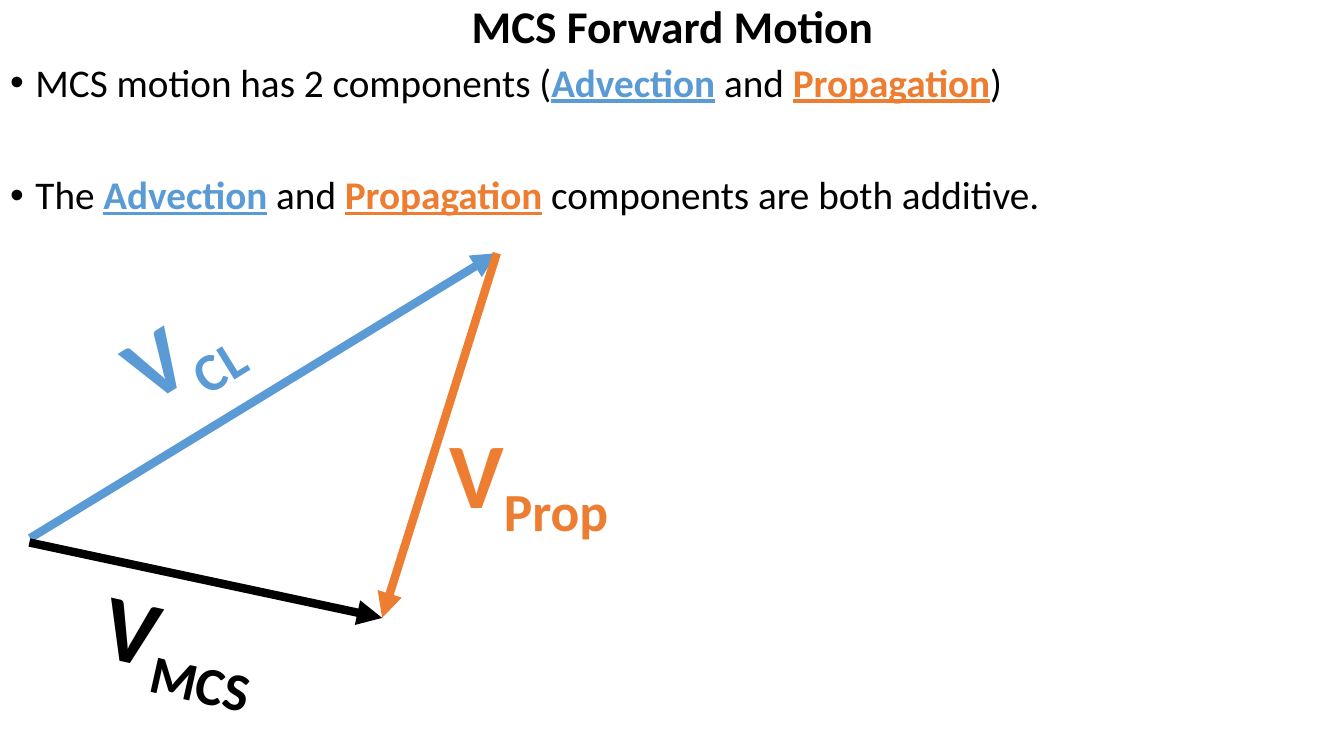
from dataclasses import dataclass
from lxml.etree import SubElement as Sub
from pptx import Presentation
from pptx.dml.color import RGBColor as RGB
from pptx.enum.shapes import MSO_CONNECTOR as Link
from pptx.enum.text import MSO_ANCHOR as Anchor, MSO_AUTO_SIZE as Fit, PP_ALIGN as Align
from pptx.oxml.ns import qn
from pptx.util import Cm, Pt


@dataclass(frozen=True)
class Theme:
    face: str = "Calibri"
    black: RGB = RGB(0, 0, 0)
    blue: RGB = RGB(0x5B, 0x9B, 0xD5)
    orange: RGB = RGB(0xED, 0x7D, 0x31)
    title: float = 32.4
    body: float = 28
    label: float = 66
    line: float = 6


def apply(item, **values):
    for name, value in values.items():
        setattr(item, name, value)


class Deck:
    def __init__(self, theme):
        self.theme = theme
        self.file = Presentation()
        apply(self.file, slide_width=Cm(33.87), slide_height=Cm(19.05))
        self.slide = self.file.slides.add_slide(self.file.slide_layouts[1])

    def place(self, shape, box):
        apply(shape, **dict(zip(("left", "top", "width", "height"), map(Cm, box))))

    def add_text(self, para, text, size, color, **style):
        run = para.add_run()
        run.text = text
        apply(run.font, name=self.theme.face, size=Pt(size), **style)
        run.font.color.rgb = color
        return run

    def title(self, text, box):
        shape = self.slide.shapes.title
        self.place(shape, box)
        frame = shape.text_frame
        apply(frame, word_wrap=True, auto_size=Fit.NONE, vertical_anchor=Anchor.MIDDLE)
        para = frame.paragraphs[0]
        apply(para, alignment=Align.CENTER, line_spacing=0.9)
        self.add_text(para, text, self.theme.title, self.theme.black, bold=True)

    def bullet(self, para):
        props = para._p.get_or_add_pPr()
        apply(para, alignment=Align.LEFT, line_spacing=0.9)
        props.set("marL", str(Cm(0.64)))
        props.set("indent", str(Cm(-0.64)))
        tint = Sub(props, qn("a:buClr"))
        Sub(tint, qn("a:srgbClr"), val=str(self.theme.black))
        Sub(props, qn("a:buFont"), typeface="Arial")
        Sub(props, qn("a:buChar"), char="•")

    def list(self, items, box, gap):
        shape = self.slide.placeholders[1]
        self.place(shape, box)
        frame = shape.text_frame
        apply(frame, word_wrap=True, auto_size=Fit.NONE, vertical_anchor=Anchor.TOP)
        terms = {"Advection": self.theme.blue, "Propagation": self.theme.orange}
        for row, parts in enumerate(items):
            para = frame.add_paragraph() if row else frame.paragraphs[0]
            para.space_before = Pt(gap if row else 0)
            self.bullet(para)
            for text in parts:
                key = text in terms
                color = terms.get(text, self.theme.black)
                self.add_text(para, text, self.theme.body, color, bold=key, underline=key)

    def arrow(self, start, end, color):
        line = self.slide.shapes.add_connector(Link.STRAIGHT, *map(Cm, start + end))
        line.line.width = Pt(self.theme.line)
        line.line.color.rgb = color
        Sub(line.line._get_or_add_ln(), qn("a:tailEnd"), type="triangle")
        Sub(line._element.spPr, qn("a:effectLst"))

    def label(self, sub, box, color, turn):
        shape = self.slide.shapes.add_textbox(*map(Cm, box))
        shape.rotation = turn
        frame = shape.text_frame
        apply(frame, word_wrap=True, auto_size=Fit.SHAPE_TO_FIT_TEXT)
        para = frame.paragraphs[0]
        self.add_text(para, "V", self.theme.label, color, bold=True)
        run = self.add_text(para, sub, self.theme.label, color, bold=True)
        run._r.get_or_add_rPr().set("baseline", "-25000")


def main():
    theme = Theme()
    deck = Deck(theme)
    deck.title("MCS Forward Motion", (2.34, 0, 29.21, 1.47))
    deck.list(
        [
            ("MCS motion has 2 components (", "Advection", " and ", "Propagation", ")"),
            ("The ", "Advection", " and ", "Propagation", " components are both additive."),
        ],
        (0, 1.47, 33.87, 12.09),
        gap=50,
    )
    peak, tip = (12.52, 6.38), (9.63, 15.57)
    vectors = [
        ((0.76, 13.56), peak, theme.blue, "CL", (2.82, 7.16, 3.35, 3.07), 328.3),
        (peak, tip, theme.orange, "Prop", (11.07, 10.36, 4.95, 3.07), 0),
        ((0.74, 13.67), tip, theme.black, "MCS", (2.39, 14.6, 4.85, 3.07), 12.6),
    ]
    for start, end, color, sub, box, turn in vectors:
        deck.arrow(start, end, color)
        deck.label(sub, box, color, turn)
    deck.file.save("out.pptx")


if __name__ == "__main__":
    main()
